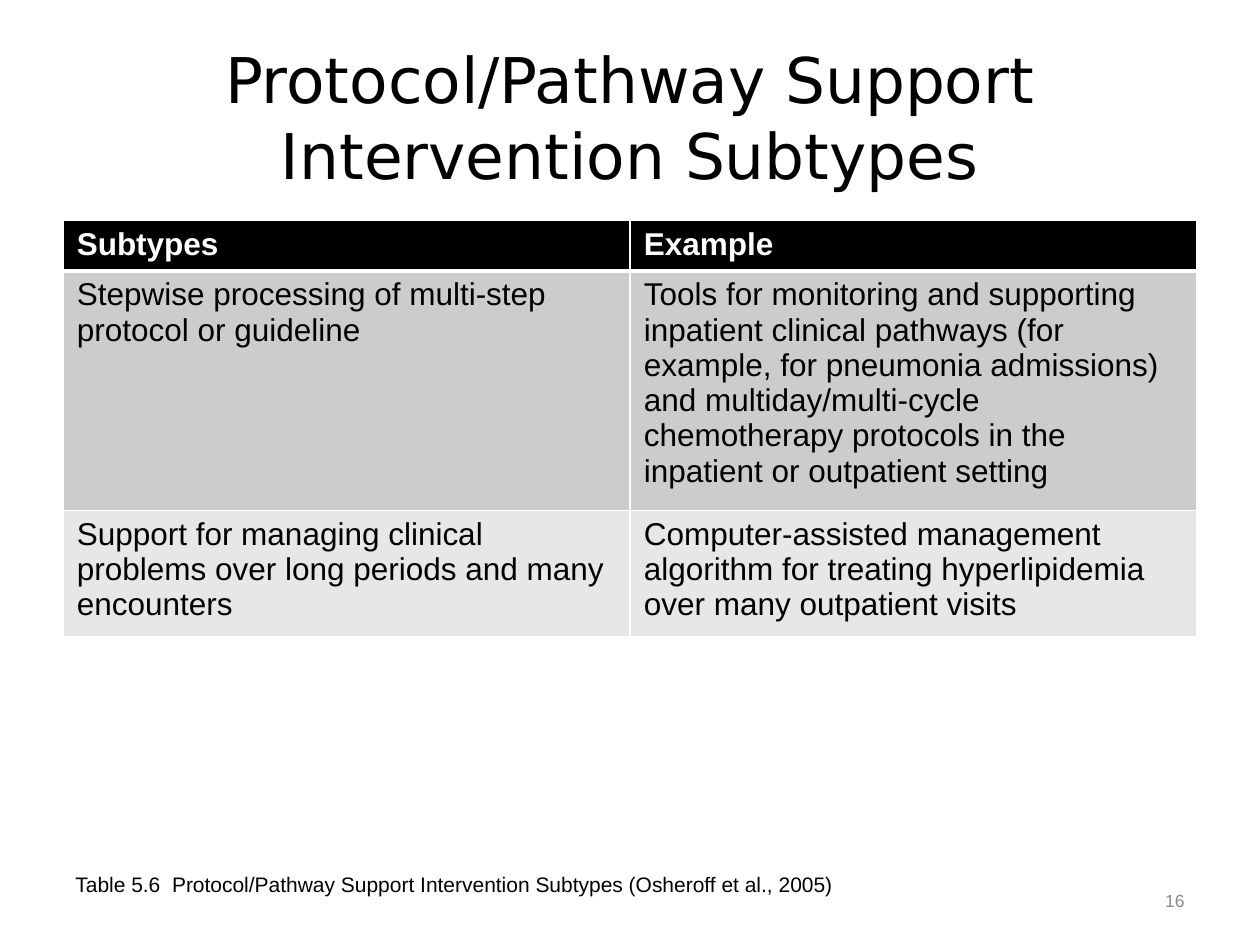
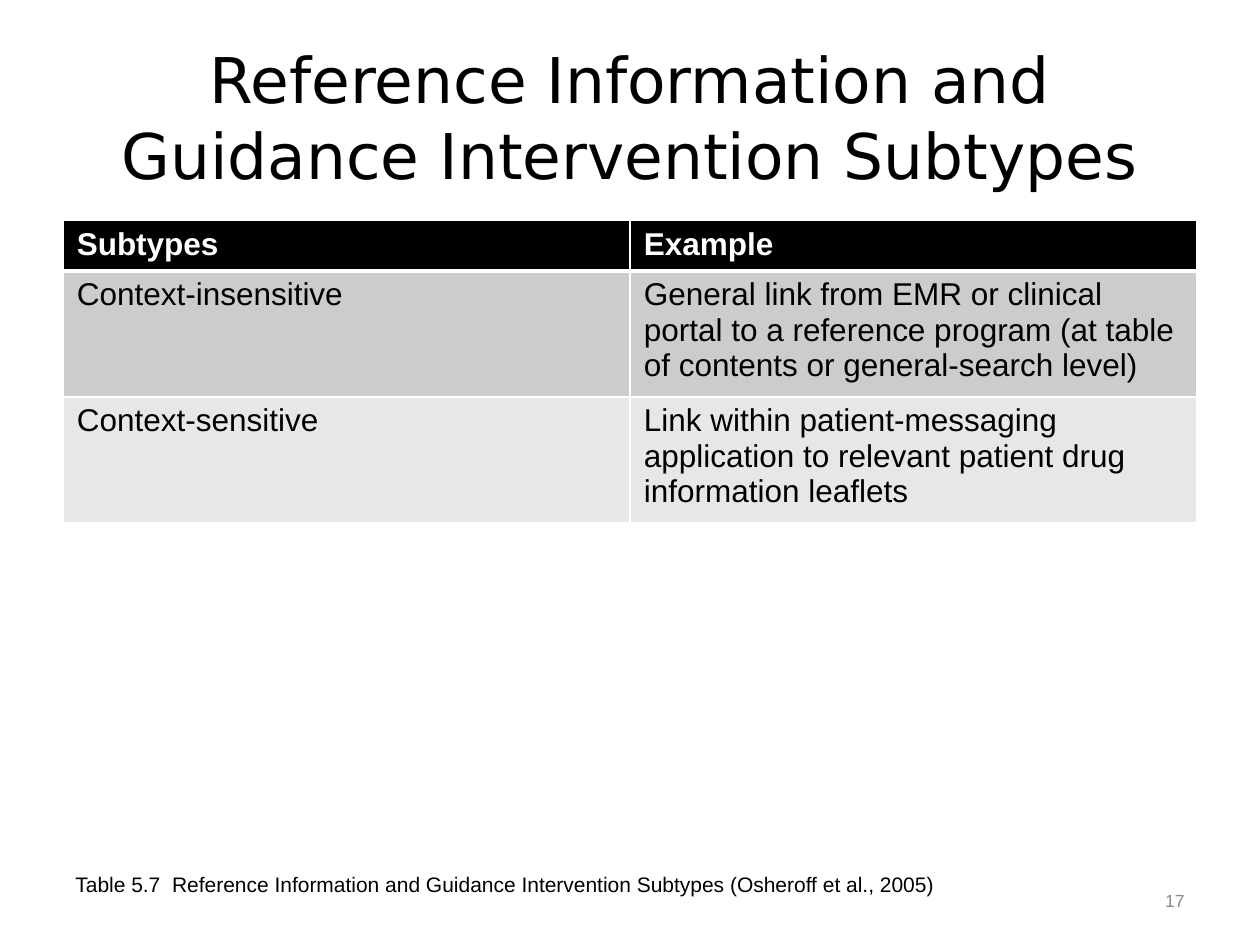
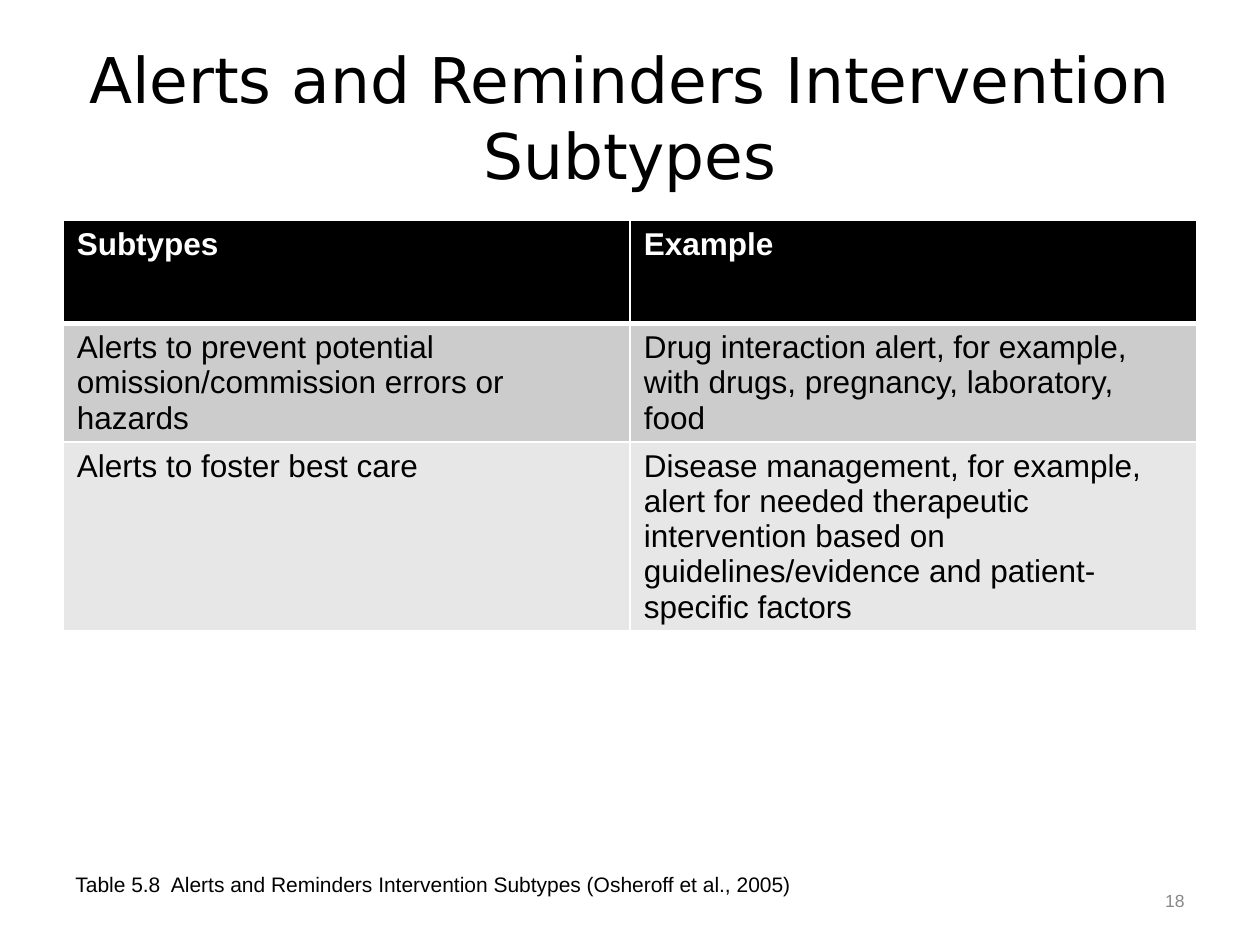
from dataclasses import dataclass

from lxml.etree import SubElement
from pptx import Presentation
from pptx.dml.color import RGBColor
from pptx.enum.text import MSO_ANCHOR, MSO_AUTO_SIZE, PP_ALIGN
from pptx.oxml.ns import qn
from pptx.util import Pt


@dataclass(frozen=True)
class Theme:
    title_font: str = "DejaVu Sans"
    body_font: str = "Arial"
    title_size: int = 36
    table_size: int = 18
    caption_size: int = 12
    number_size: int = 10
    black: str = "000000"
    white: str = "FFFFFF"
    gray: str = "898989"
    bands: tuple = ("CCCCCC", "E7E7E7")
    thin: int = 1
    thick: int = 3


T = Theme()
FIRST_NUMBER = 16
HEADER = ("Subtypes", "Example")
SLIDES = [
    (
        "Protocol/Pathway Support Intervention Subtypes",
        (28.8, 136.8, 72),
        [
            ("Stepwise processing of multi-step protocol or guideline",
             "Tools for monitoring and supporting inpatient clinical pathways "
             "(for example, for pneumonia admissions) and multiday/multi-cycle "
             "chemotherapy protocols in the inpatient or outpatient setting"),
            ("Support for managing clinical problems over long periods and many encounters",
             "Computer-assisted management algorithm for treating hyperlipidemia "
             "over many outpatient visits"),
        ],
        "Table 5.6  Protocol/Pathway Support Intervention Subtypes (Osheroff et al., 2005)",
    ),
    (
        "Reference Information and Guidance Intervention Subtypes",
        (28.8, 72, 72),
        [
            ("Context-insensitive",
             "General link from EMR or clinical portal to a reference program "
             "(at table of contents or general-search level)"),
            ("Context-sensitive",
             "Link within patient-messaging application to relevant patient drug "
             "information leaflets"),
        ],
        "Table 5.7  Reference Information and Guidance Intervention Subtypes "
        "(Osheroff et al., 2005)",
    ),
    (
        "Alerts and Reminders Intervention Subtypes",
        (59, 67, 107),
        [
            ("Alerts to prevent potential omission/commission errors or hazards",
             "Drug interaction alert, for example, with drugs, pregnancy, laboratory, food"),
            ("Alerts to foster best care",
             "Disease management, for example, alert for needed therapeutic intervention "
             "based on guidelines/evidence and patient-specific factors"),
        ],
        "Table 5.8  Alerts and Reminders Intervention Subtypes (Osheroff et al., 2005)",
    ),
]


def write(tf, text, *, size, font=T.body_font, color=T.black, bold=False,
          align=PP_ALIGN.LEFT, anchor=MSO_ANCHOR.TOP):
    tf.word_wrap = True
    tf.vertical_anchor = anchor
    p = tf.paragraphs[0]
    p.alignment = align
    r = p.add_run()
    r.text = text
    r.font.name = font
    r.font.size = Pt(size)
    r.font.bold = bold
    r.font.color.rgb = RGBColor.from_string(color)


def add_title(s, text):
    sp = s.shapes.title
    sp.left, sp.top, sp.width, sp.height = Pt(36), Pt(21.6), Pt(648), Pt(90)
    sp.text_frame.auto_size = MSO_AUTO_SIZE.NONE
    write(sp.text_frame, text, size=T.title_size, font=T.title_font,
          align=PP_ALIGN.CENTER, anchor=MSO_ANCHOR.MIDDLE)


def add_text(s, text, left, top, width, height, **fmt):
    sp = s.shapes.add_textbox(Pt(left), Pt(top), Pt(width), Pt(height))
    write(sp.text_frame, text, **fmt)


def set_borders(cell, **widths):
    tcPr = cell._tc.get_or_add_tcPr()
    for side in "LRTB":
        ln = SubElement(tcPr, qn(f"a:ln{side}"), w=str(Pt(widths.get(side, T.thin))))
        fill = SubElement(ln, qn("a:solidFill"))
        SubElement(fill, qn("a:srgbClr"), val=T.white)


def format_cell(cell, text, row):
    header = row == 0
    set_borders(cell, T=T.thick if row == 1 else T.thin, B=T.thick if header else T.thin)
    cell.fill.solid()
    cell.fill.fore_color.rgb = RGBColor.from_string(
        T.black if header else T.bands[(row - 1) % len(T.bands)])
    cell.margin_left = cell.margin_right = Pt(7.92)
    cell.margin_top = cell.margin_bottom = Pt(3.6)
    write(cell.text_frame, text, size=T.table_size, bold=header,
          color=T.white if header else T.black)


def add_subtype_table(s, heights, rows):
    table = s.shapes.add_table(len(heights), len(HEADER), Pt(36), Pt(126),
                               Pt(648), Pt(sum(heights))).table
    for i, (height, texts) in enumerate(zip(heights, [HEADER, *rows])):
        table.rows[i].height = Pt(height)
        for j, text in enumerate(texts):
            format_cell(table.cell(i, j), text, i)


def main():
    prs = Presentation()
    prs.slide_width, prs.slide_height = Pt(720), Pt(540)
    for number, (title, heights, rows, caption) in enumerate(SLIDES, FIRST_NUMBER):
        s = prs.slides.add_slide(prs.slide_layouts[5])
        add_title(s, title)
        add_subtype_table(s, heights, rows)
        add_text(s, caption, 36, 494.64, 601.2, 41.76, size=T.caption_size)
        add_text(s, str(number), 643.68, 493.2, 40.32, 43.2, size=T.number_size,
                 color=T.gray, align=PP_ALIGN.RIGHT, anchor=MSO_ANCHOR.MIDDLE)
    prs.save("out.pptx")


if __name__ == "__main__":
    main()
